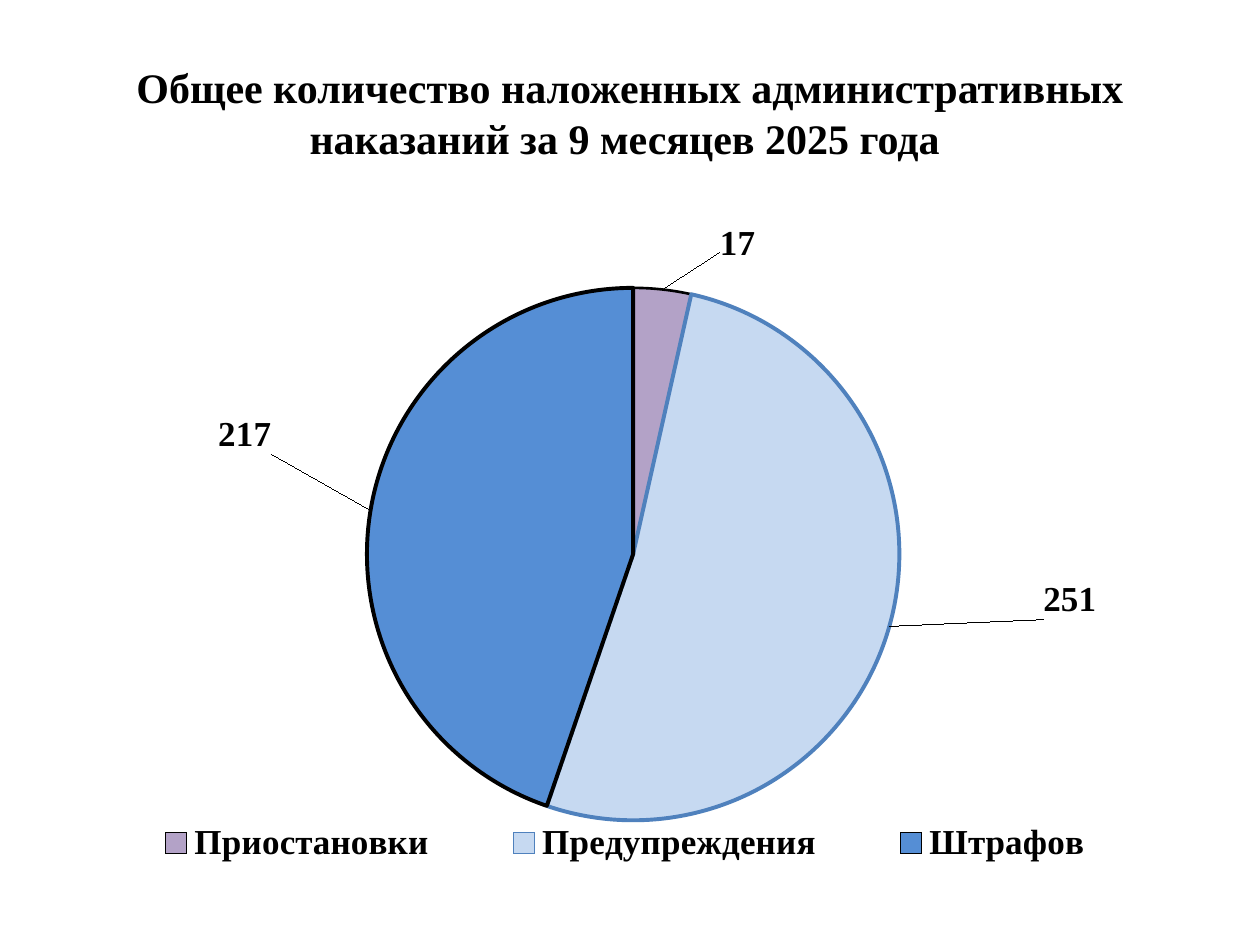
import pptx
import pptx.chart.data
import pptx.dml.color
import pptx.enum.chart
import pptx.enum.text
import pptx.oxml
import pptx.util
from pptx.util import Cm

# Content
TITLE = "Общее количество наложенных административных наказаний за 9 месяцев 2025 года "
FACE = "Times New Roman"
# name, value, fill, line colour, line width, label shift (percent of the chart)
PARTS = [
    ("Приостановки", 17, "B3A2C7", "000000", 1.5, (5, -4.45)),
    ("Предупреждения", 251, "C6D9F1", "4F81BD", 2.25, (12.95, -7.15)),
    ("Штрафов", 217, "558ED5", "000000", 2.25, (-8.1, -8.15)),
]
# Places in percent of the chart
PIE = {"x": 26.65, "y": 9.45, "w": 47, "h": 79}
KEY = {"x": 2.5, "y": 87.8, "w": 93.9, "h": 8}


def tint(code):
    return pptx.dml.color.RGBColor.from_string(code)


def style(font, size=20, bold=True, color="000000", name=FACE):
    font.size = pptx.util.Pt(size)
    font.bold = bold
    font.name = name
    font.color.rgb = tint(color)


def write(slide, text, left, top, width, height, **look):
    frame = slide.shapes.add_textbox(left, top, width, height).text_frame
    frame.word_wrap = True
    frame.vertical_anchor = pptx.enum.text.MSO_ANCHOR.MIDDLE
    line = frame.paragraphs[0]
    line.alignment = pptx.enum.text.PP_ALIGN.CENTER
    run = line.add_run()
    run.text = text
    style(run.font, **look)


def layout(box, target="", edge=False):
    """Manual layout; edge=True measures from the chart's corner."""
    tags = [("layoutTarget", target)] if target else []
    if edge:
        tags += [("xMode", "edge"), ("yMode", "edge")]
    tags += [(tag, round(val / 100, 4)) for tag, val in box.items()]
    body = "".join(f'<c:{tag} val="{val}"/>' for tag, val in tags)
    space = "http://schemas.openxmlformats.org/drawingml/2006/chart"
    return pptx.oxml.parse_xml(
        f'<c:layout xmlns:c="{space}"><c:manualLayout>{body}</c:manualLayout></c:layout>')


def place(node, new, after=None):
    """Replace the node's layout, or put one after the given child."""
    for old in node.xpath("c:layout"):
        node.remove(old)
    if after is None:
        node.insert(0, new)
    else:
        node.xpath(after)[0].addnext(new)


deck = pptx.Presentation()
deck.slide_width, deck.slide_height = Cm(25.4), Cm(19.05)
slide = deck.slides.add_slide(deck.slide_layouts[6])

# Title
write(slide, TITLE, Cm(1.27), Cm(0.76), Cm(22.86), Cm(3), size=24)

# Pie
data = pptx.chart.data.CategoryChartData()
data.categories = [part[0] for part in PARTS]
data.add_series("Series 1", [part[1] for part in PARTS])
chart = slide.shapes.add_chart(
    pptx.enum.chart.XL_CHART_TYPE.PIE,
    Cm(1.3), Cm(4.52), Cm(22.86), Cm(13.59), data).chart
chart.has_title = False
style(chart.font, size=18, bold=False, name="Calibri")
plot = chart.plots[0]
plot.vary_by_categories = True
place(chart._chartSpace.xpath("c:chart/c:plotArea")[0],
      layout(PIE, "inner", edge=True))

# Slices and their labels
outer = pptx.enum.chart.XL_LABEL_POSITION.OUTSIDE_END
row = plot.series[0]
tags = row.data_labels
tags.show_value = True
tags.position = outer
style(tags.font)
for i, (name, value, fill, edge, width, (dx, dy)) in enumerate(PARTS):
    point = row.points[i]
    point.format.fill.solid()
    point.format.fill.fore_color.rgb = tint(fill)
    point.format.line.color.rgb = tint(edge)
    point.format.line.width = pptx.util.Pt(width)
    label = point.data_label
    label.position = outer
    style(label.font)
    node = row._element.xpath(f"c:dLbls/c:dLbl[c:idx/@val='{i}']")[0]
    place(node, layout({"x": dx, "y": dy}), "c:idx")

# Legend
chart.has_legend = True
legend = chart.legend
legend.position = pptx.enum.chart.XL_LEGEND_POSITION.BOTTOM
legend.include_in_layout = False
style(legend.font)
place(legend._element, layout(KEY, edge=True), "c:legendPos")

deck.save("out.pptx")
